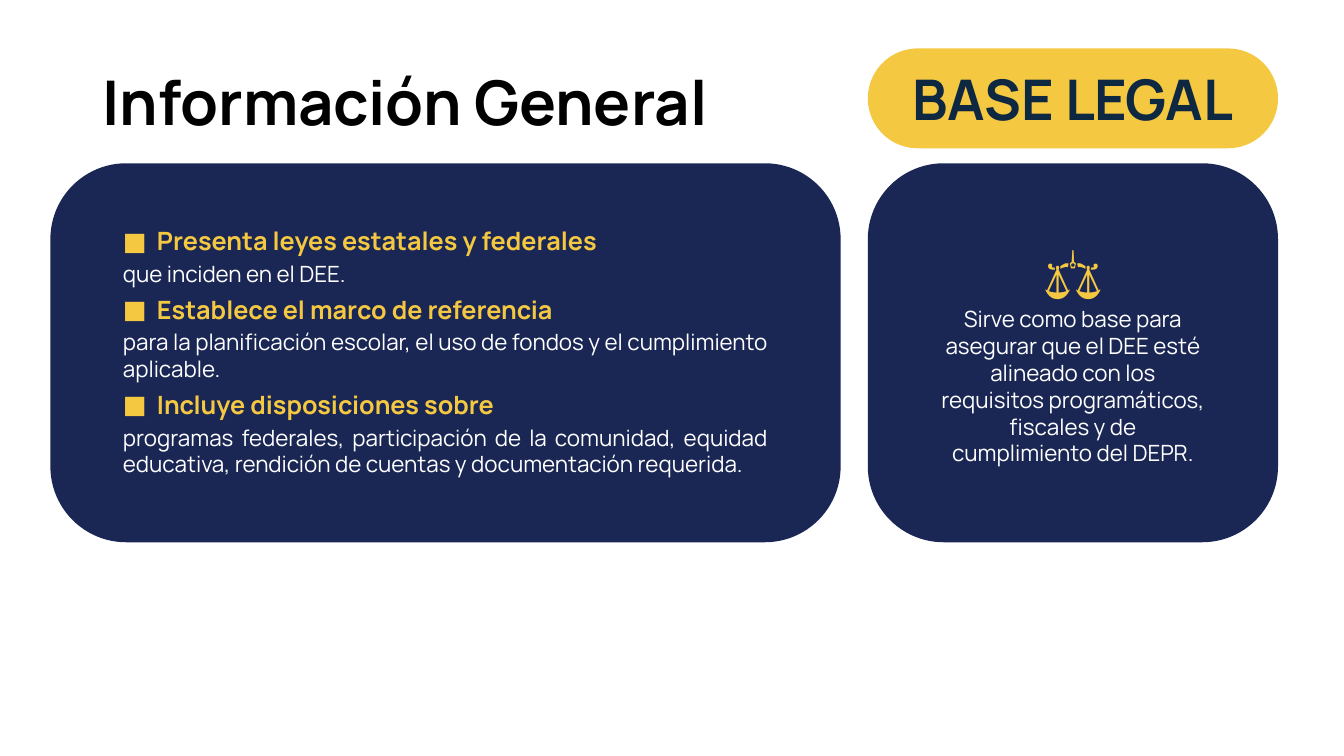
"""Builds the slide on general information and the legal basis of the DEE."""
from dataclasses import dataclass

from lxml.etree import SubElement
from pptx import Presentation
from pptx.dml.color import RGBColor
from pptx.enum.shapes import MSO_SHAPE
from pptx.enum.text import MSO_ANCHOR, PP_ALIGN
from pptx.oxml.ns import qn
from pptx.shapes.autoshape import Shape
from pptx.slide import Slide
from pptx.text.text import TextFrame
from pptx.util import Pt

COLORS = {"navy": "1A2754", "gold": "F5C842", "ink": "0E2841", "black": "000000", "white": "FFFFFF"}
CENTER, JUSTIFY = PP_ALIGN.CENTER, PP_ALIGN.JUSTIFY
PANEL_TOP, PANEL_HEIGHT = 116.64, 270.7
RIGHT_LEFT, RIGHT_WIDTH = 619.9, 293
HEADING_TOP = 34.6


@dataclass(frozen=True)
class Card:
    left: float
    top: float
    width: float
    height: float
    fill: str
    corner: float
    insets: tuple[float, float, float, float]
    anchor: MSO_ANCHOR = MSO_ANCHOR.MIDDLE


@dataclass(frozen=True)
class Point:
    heading: str
    detail: str


BADGE = Card(RIGHT_LEFT, HEADING_TOP, RIGHT_WIDTH, 71.3, "gold", 0.5, (14.4, 0, 14.4, 0))
OVERVIEW = Card(36, PANEL_TOP, 564.5, PANEL_HEIGHT, "navy", 0.2, (36, 28.8, 36, 21.6), MSO_ANCHOR.TOP)
PURPOSE = Card(RIGHT_LEFT, PANEL_TOP, RIGHT_WIDTH, PANEL_HEIGHT, "navy", 0.2, (36, 21.6, 36, 21.6))

POINTS = [
    Point("Presenta leyes estatales y federales", "que inciden en el DEE."),
    Point("Establece el marco de referencia",
          "para la planificación escolar, el uso de fondos y el cumplimiento aplicable."),
    Point("Incluye disposiciones sobre",
          "programas federales, participación de la comunidad, equidad educativa, "
          "rendición de cuentas y documentación requerida."),
]


def write(frame: TextFrame, text: str, *, size: float, color: str, bold: bool = False,
          font: str = "Manrope", align: PP_ALIGN = PP_ALIGN.LEFT, before: float = 0,
          spacing: float = 1.0, bullet: str = "") -> None:
    first = not frame.text
    paragraph = frame.paragraphs[0] if first else frame.add_paragraph()
    if bullet:
        properties = paragraph._p.get_or_add_pPr()
        properties.set("marL", str(Pt(24.3)))
        properties.set("indent", str(-Pt(24.3)))
        SubElement(properties, qn("a:buFont"), typeface=font)
        SubElement(properties, qn("a:buChar"), char=bullet)
    paragraph.alignment = align
    paragraph.line_spacing = spacing
    paragraph.space_before = Pt(0 if first else before)
    run = paragraph.add_run()
    run.text = text
    run.font.name = font
    run.font.size = Pt(size)
    run.font.bold = bold
    run.font.color.rgb = RGBColor.from_string(COLORS[color])


def draw_card(slide: Slide, card: Card) -> TextFrame:
    panel: Shape = slide.shapes.add_shape(
        MSO_SHAPE.ROUNDED_RECTANGLE, Pt(card.left), Pt(card.top), Pt(card.width), Pt(card.height))
    panel.adjustments[0] = card.corner
    panel.shadow.inherit = False
    panel.fill.solid()
    panel.fill.fore_color.rgb = RGBColor.from_string(COLORS[card.fill])
    panel.line.fill.background()
    frame = panel.text_frame
    frame.word_wrap = True
    frame.vertical_anchor = card.anchor
    frame.margin_left, frame.margin_top, frame.margin_right, frame.margin_bottom = map(Pt, card.insets)
    return frame


def main() -> None:
    deck = Presentation()
    deck.slide_width, deck.slide_height = Pt(960), Pt(540)
    slide = deck.slides.add_slide(deck.slide_layouts[6])

    title = slide.shapes.add_textbox(Pt(66.24), Pt(HEADING_TOP), Pt(828), Pt(82.1)).text_frame
    title.word_wrap = True
    title.vertical_anchor = MSO_ANCHOR.MIDDLE
    write(title, "Información General", size=44, color="black", bold=True, spacing=0.9)

    badge = draw_card(slide, BADGE)
    write(badge, "BASE LEGAL", size=40, color="ink", bold=True, align=CENTER)

    overview = draw_card(slide, OVERVIEW)
    for point in POINTS:
        write(overview, point.heading, size=18, color="gold", bold=True, align=JUSTIFY,
              before=5, bullet="■")
        write(overview, point.detail, size=16, color="white", align=JUSTIFY, before=3)

    purpose = draw_card(slide, PURPOSE)
    write(purpose, "⚖", size=36, color="gold", bold=True, font="Cabin", align=CENTER)
    write(purpose, "Sirve como base para asegurar que el DEE esté alineado con los requisitos "
          "programáticos, fiscales y de cumplimiento del DEPR.",
          size=16, color="white", align=CENTER, before=4)

    deck.save("out.pptx")


if __name__ == "__main__":
    main()
